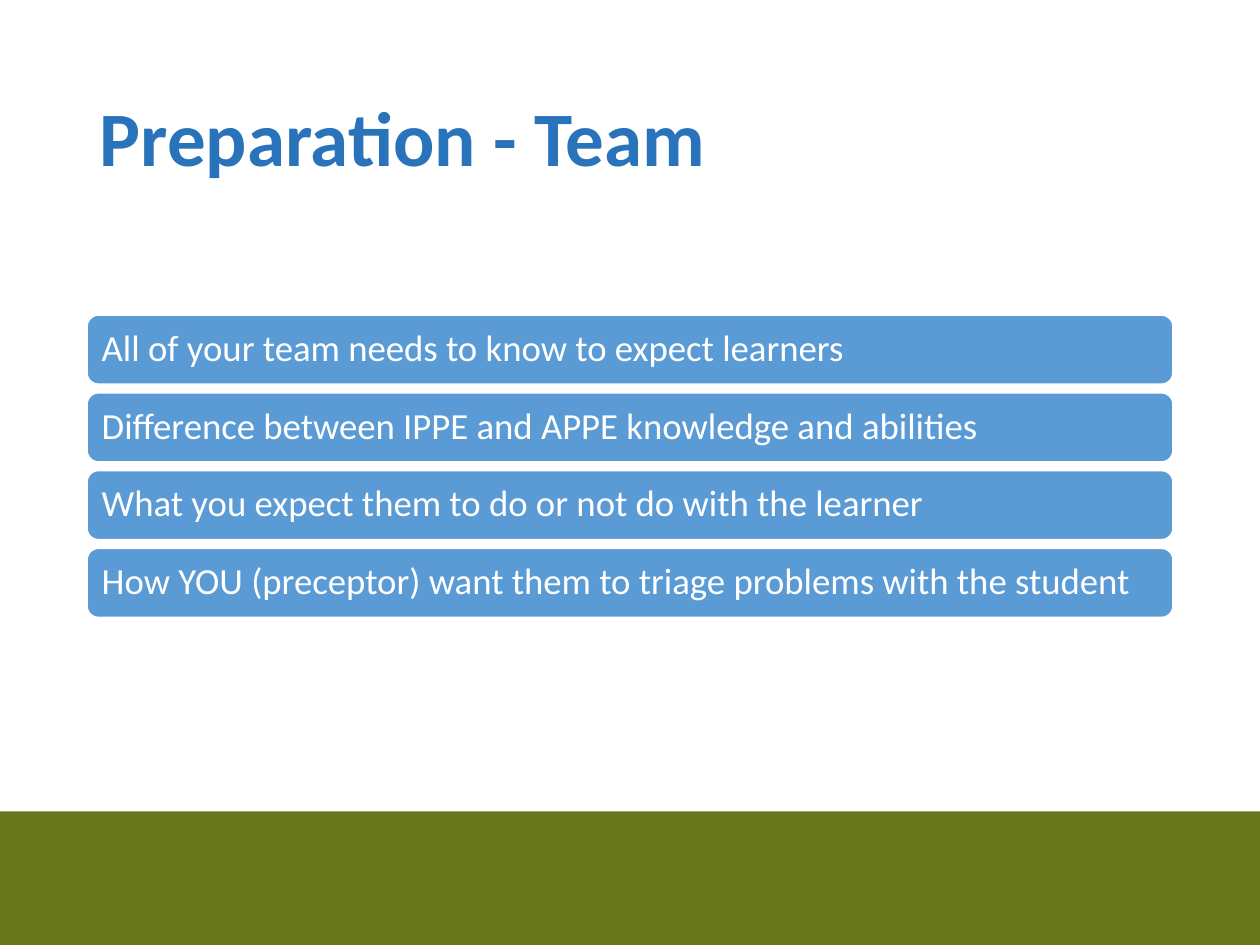
from pptx import Presentation
from pptx.dml.color import RGBColor
from pptx.enum.shapes import MSO_SHAPE
from pptx.enum.text import MSO_ANCHOR, MSO_AUTO_SIZE, PP_ALIGN
from pptx.util import Inches, Pt

TITLE = "Preparation - Team"
TEAM_POINTS = [
    "All of your team needs to know to expect learners",
    "Difference between IPPE and APPE knowledge and abilities",
    "What you expect them to do or not do with the learner",
    "How YOU (preceptor) want them to triage problems with the student",
]

WHITE = RGBColor(0xFF, 0xFF, 0xFF)
TITLE_BLUE = RGBColor(0x29, 0x73, 0xBA)
BAR_BLUE = RGBColor(0x5B, 0x9B, 0xD5)
FOOTER_GREEN = RGBColor(0x67, 0x77, 0x19)
FONT = "Calibri"
RECTANGLE = MSO_SHAPE.RECTANGLE
ROUNDED = MSO_SHAPE.ROUNDED_RECTANGLE
MIDDLE = MSO_ANCHOR.MIDDLE
NO_FIT = MSO_AUTO_SIZE.NONE
LEFT = PP_ALIGN.LEFT

SLIDE_WIDTH, SLIDE_HEIGHT = 10, 7.5
MARGIN = 0.69
CONTENT_WIDTH = SLIDE_WIDTH - 2 * MARGIN
TITLE_TOP, TITLE_HEIGHT = 0.4, 1.45
FOOTER_TOP = 6.44
BARS_TOP, BAR_HEIGHT, BAR_PITCH = 2.5, 0.55, 0.617
BAR_INSET = 0.09


def add_box(slide, kind, left, top, width, height, color):
    shape = slide.shapes.add_shape(
        kind, Inches(left), Inches(top), Inches(width), Inches(height)
    )
    shape.shadow.inherit = False
    shape.fill.solid()
    shape.fill.fore_color.rgb = color
    shape.line.fill.background()
    return shape


def write_text(shape, text, size, color, bold=False):
    frame = shape.text_frame
    frame.word_wrap = True
    frame.auto_size = NO_FIT
    frame.vertical_anchor = MIDDLE
    paragraph = frame.paragraphs[0]
    paragraph.alignment = LEFT
    paragraph.line_spacing = 0.9
    run = paragraph.add_run()
    run.text = text
    run.font.name = FONT
    run.font.size = Pt(size)
    run.font.bold = bold
    run.font.color.rgb = color


def add_bar(slide, row, text):
    top = BARS_TOP + row * BAR_PITCH
    bar = add_box(slide, ROUNDED, MARGIN, top, CONTENT_WIDTH, BAR_HEIGHT, BAR_BLUE)
    bar.line.color.rgb = WHITE
    bar.line.width = Pt(1)
    frame = bar.text_frame
    frame.margin_left = frame.margin_right = Inches(BAR_INSET)
    frame.margin_top = frame.margin_bottom = Inches(BAR_INSET)
    write_text(bar, text, 21, WHITE)


def main():
    presentation = Presentation()
    presentation.slide_width = Inches(SLIDE_WIDTH)
    presentation.slide_height = Inches(SLIDE_HEIGHT)
    slide = presentation.slides.add_slide(presentation.slide_layouts[5])
    slide.background.fill.solid()
    slide.background.fill.fore_color.rgb = WHITE

    add_box(slide, RECTANGLE, 0, FOOTER_TOP, SLIDE_WIDTH,
            SLIDE_HEIGHT - FOOTER_TOP, FOOTER_GREEN)

    title = slide.shapes.title
    title.left, title.top = Inches(MARGIN), Inches(TITLE_TOP)
    title.width, title.height = Inches(CONTENT_WIDTH), Inches(TITLE_HEIGHT)
    write_text(title, TITLE, 44, TITLE_BLUE, bold=True)

    for row, text in enumerate(TEAM_POINTS):
        add_bar(slide, row, text)

    presentation.save("out.pptx")


if __name__ == "__main__":
    main()
